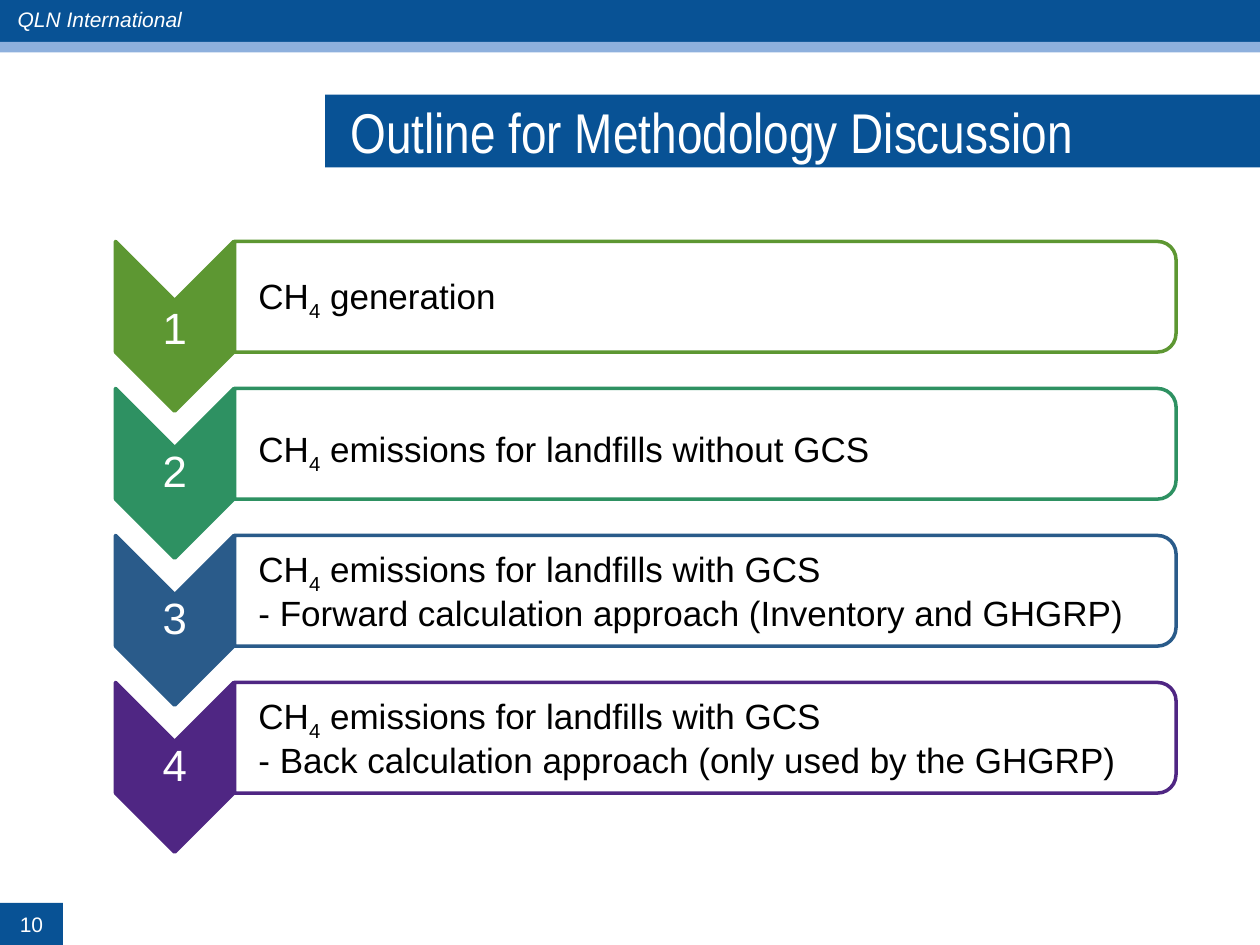
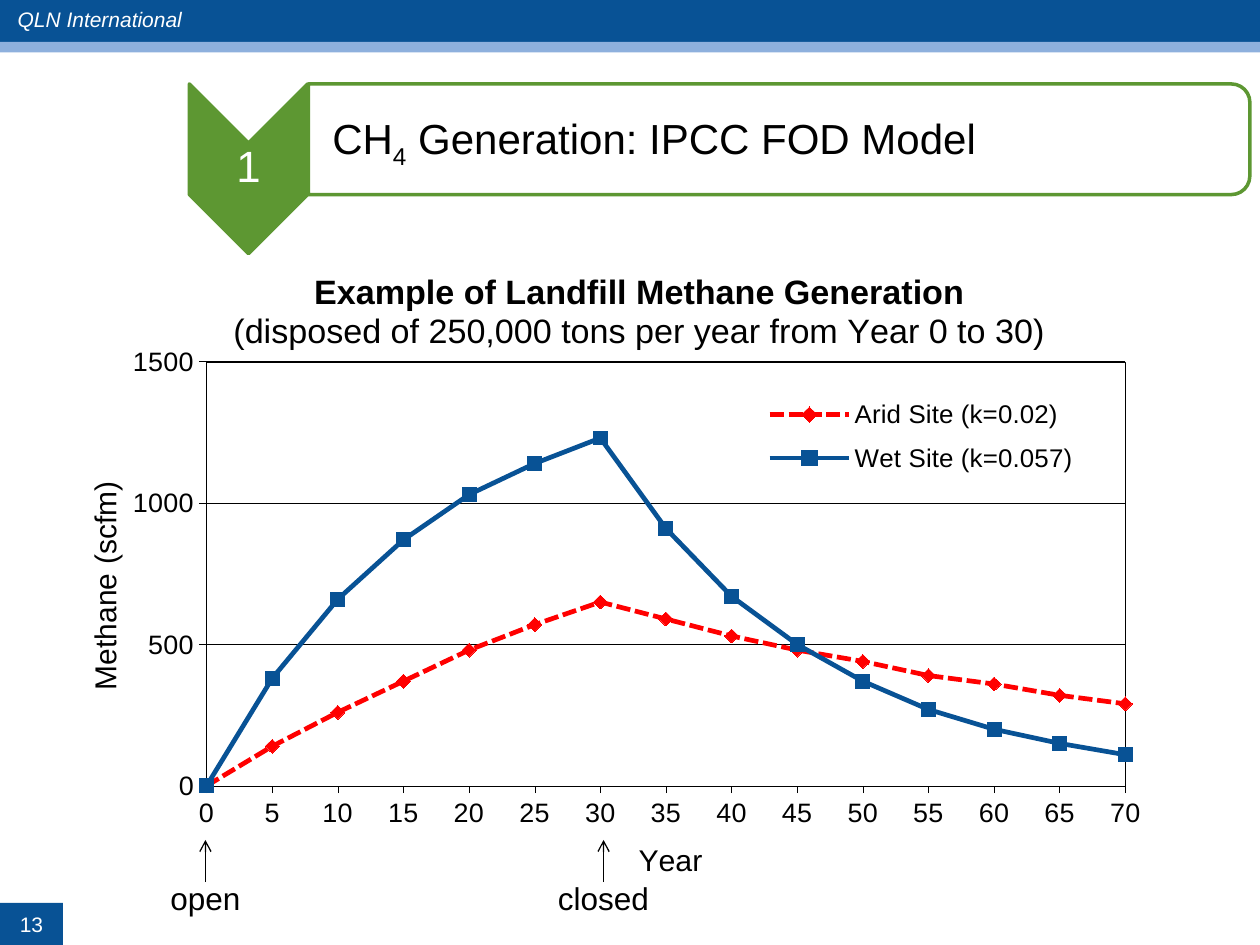
"""Build two slides on landfill methane: an outline and a generation chart."""
import pptx
import pptx.chart.data
import pptx.dml.color
import pptx.enum.chart
import pptx.enum.dml
import pptx.enum.shapes
import pptx.enum.text
import pptx.oxml
import pptx.oxml.ns
import pptx.util

Pt = pptx.util.Pt
Shape = pptx.enum.shapes.MSO_SHAPE
Align = pptx.enum.text.PP_ALIGN
Anchor = pptx.enum.text.MSO_ANCHOR
Mark = pptx.enum.chart.XL_MARKER_STYLE
Dash = pptx.enum.dml.MSO_LINE
qn = pptx.oxml.ns.qn

HUES = {"blue": "085295", "pale": "8EB0DD", "white": "FFFFFF", "black": "000000",
        "red": "FF0000", "green": "5D9732", "teal": "2E9162", "steel": "2A5B8A",
        "plum": "4F2683"}
BRAND = "QLN International"
TITLE = "Outline for Methodology Discussion"
STEPS = [
    {"hue": "green", "lines": ["CH_4 generation"], "drop": 36.5},
    {"hue": "teal", "lines": ["CH_4 emissions for landfills without GCS"], "tall": 63.4},
    {"hue": "steel", "lines": ["CH_4 emissions for landfills with GCS",
                               "- Forward calculation approach (Inventory and GHGRP)"]},
    {"hue": "plum", "lines": ["CH_4 emissions for landfills with GCS",
                              "- Back calculation approach (only used by the GHGRP)"]},
]
MODEL = ["CH_4 Generation: IPCC FOD Model"]
HEAD = ["Example of Landfill Methane Generation",
        "(disposed of 250,000 tons per year from Year 0 to 30)"]
YEARS = range(0, 71, 5)
SITES = [
    ("Arid Site (k=0.02)", "red", Mark.DIAMOND, Dash.SQUARE_DOT,
     [0, 140, 260, 370, 480, 570, 650, 590, 530, 480, 440, 390, 360, 320, 290]),
    ("Wet Site (k=0.057)", "blue", Mark.SQUARE, Dash.SOLID,
     [0, 380, 660, 870, 1030, 1140, 1230, 910, 670, 500, 370, 270, 200, 150, 110]),
]
EVENTS = [("open", 117.4, 66), ("closed", 344.9, 78)]


def tint(name):
    """Return the named colour."""
    return pptx.dml.color.RGBColor.from_string(HUES[name])


def write(frame, lines, size=12, hue="black", face="Arial", align=Align.LEFT,
          bold=0, italic=False, anchor=None, pad=None, space=None, after=None,
          wrap=None):
    """Fill a text frame; an underscore lowers the next character."""
    if anchor is not None:
        frame.vertical_anchor = anchor
    if wrap is not None:
        frame.word_wrap = wrap
        frame.auto_size = pptx.enum.text.MSO_AUTO_SIZE.NONE
    if pad:
        left, top, right, base = map(Pt, pad)
        frame.margin_left, frame.margin_top = left, top
        frame.margin_right, frame.margin_bottom = right, base
    for row, line in enumerate(lines):
        para = frame.add_paragraph() if row else frame.paragraphs[0]
        para.alignment = align
        if space:
            para.line_spacing = space
        if after:
            para.space_after = Pt(after)
        first, *rest = line.split("_")
        parts = [(first, False)]
        for part in rest:
            parts += [(part[0], True), (part[1:], False)]
        for text, low in parts:
            run = para.add_run()
            run.text = text
            font = run.font
            font.name, font.size = face, Pt(size)
            font.bold, font.italic = row < bold, italic
            font.color.rgb = tint(hue)
            if low:
                run._r.get_or_add_rPr().set("baseline", "-25000")


def put(item, x, y, wide, tall):
    """Move and size a shape."""
    item.left, item.top, item.width, item.height = map(Pt, (x, y, wide, tall))


def draw(slide, kind, x, y, wide, tall, fill, line=None, turn=False):
    """Add a shape that shows in the given frame, turned a quarter if asked."""
    if turn:
        x, y = x + (wide - tall) / 2, y + (tall - wide) / 2
        wide, tall = tall, wide
    item = slide.shapes.add_shape(kind, *map(Pt, (x, y, wide, tall)))
    item.shadow.inherit = False
    item.rotation = 90 if turn else 0
    item.fill.solid()
    item.fill.fore_color.rgb = tint(fill)
    if line:
        item.line.color.rgb = tint(line)
        item.line.width = Pt(2)
    else:
        item.line.fill.background()
    return item


def label(slide, lines, x, y, wide, tall, **form):
    """Add a text box."""
    box = slide.shapes.add_textbox(*map(Pt, (x, y, wide, tall)))
    write(box.text_frame, lines, **form)


def start(deck, page):
    """Add a title-only slide with its bands, brand and page number."""
    slide = deck.slides.add_slide(deck.slide_layouts[5])
    draw(slide, Shape.RECTANGLE, 0, 0, 720, 24, "blue")
    draw(slide, Shape.RECTANGLE, 0, 24, 720, 6, "pale")
    label(slide, [BRAND], 3, 0, 103, 21.6, hue="white", italic=True, wrap=False)
    badge = draw(slide, Shape.RECTANGLE, 0, 516, 36, 24, "blue")
    write(badge.text_frame, [str(page)], hue="white", align=Align.CENTER,
          anchor=Anchor.MIDDLE, pad=(0, 0, 0, 0))
    return slide


def step(slide, num, x, y, lines, hue, size=20, drop=34, tall=57, title=None):
    """Add a numbered chevron and its bar, with the text in a box or the title."""
    draw(slide, Shape.CHEVRON, x, y, 67.6, 97, hue, hue, True)
    tiny = (1.4, 1.4, 1.4, 1.4)
    label(slide, [str(num)], x, y + drop, 67.6, 28.8, size=25, hue="white",
          align=Align.CENTER, anchor=Anchor.MIDDLE, pad=tiny, space=0.9, wrap=True)
    draw(slide, Shape.ROUND_2_SAME_RECTANGLE, x + 68, y, 538, 63.2, "white", hue, True)
    spot = (x + 68, y + 3.2, 535, tall)
    form = dict(size=size, anchor=Anchor.MIDDLE, pad=(13.7, 1.4, 1.4, 1.4),
                space=0.9, after=size * 0.15, wrap=True)
    if title is None:
        label(slide, lines, *spot, **form)
    else:
        put(title, *spot)
        write(title.text_frame, lines, **form)
        slide.shapes.element.append(title.element)


def place(part, x, y, wide=None, tall=None):
    """Fix a chart part at fractions of the chart area."""
    plot = part.tag == qn("c:plotArea")
    old = part.find(qn("c:layout"))
    if old is not None:
        part.remove(old)
    tags = [("layoutTarget", "inner")] if plot else []
    tags += [("xMode", "edge"), ("yMode", "edge"), ("x", x), ("y", y)]
    if wide:
        tags += [("w", wide), ("h", tall)]
    body = "".join(f'<c:{tag} val="{val}"/>' for tag, val in tags)
    space = pptx.oxml.ns.nsdecls("c")
    part.insert(0 if plot else 1, pptx.oxml.parse_xml(
        f"<c:layout {space}><c:manualLayout>{body}</c:manualLayout></c:layout>"))


def thin(line):
    """Make a chart line thin and black."""
    line.color.rgb = tint("black")
    line.width = Pt(0.22)


def graph(slide):
    """Add the methane line chart."""
    data = pptx.chart.data.CategoryChartData()
    data.categories = [str(year) for year in YEARS]
    for name, *_, vals in SITES:
        data.add_series(name, vals)
    kind = pptx.enum.chart.XL_CHART_TYPE.LINE_MARKERS
    chart = slide.shapes.add_chart(kind, *map(Pt, (32.4, 138.2, 658.8, 368.6)), data).chart
    chart.font.name, chart.font.size = "Arial", Pt(16.5)
    chart.font.color.rgb = tint("black")
    chart.has_title = True
    write(chart.chart_title.text_frame, HEAD, size=19.5, align=Align.CENTER, bold=1)
    place(chart.chart_title._element, 0.15, 0.04)

    for axis, name, x, y in ((chart.category_axis, "Year", 0.5, 0.93),
                             (chart.value_axis, "Methane (scfm)", 0.02, 0.37)):
        axis.has_title = True
        write(axis.axis_title.text_frame, [name], size=17.3, align=Align.CENTER)
        place(axis.axis_title._element, x, y)
        axis.major_tick_mark = pptx.enum.chart.XL_TICK_MARK.OUTSIDE
        font = axis.tick_labels.font
        font.name, font.size = "Arial", Pt(15.4)
        font.color.rgb = tint("black")
        thin(axis.format.line)
    scale = chart.value_axis
    scale.minimum_scale, scale.maximum_scale, scale.major_unit = 0, 1500, 500
    thin(scale.major_gridlines.format.line)
    space = pptx.oxml.ns.nsdecls("c", "a")
    scale._element.find(qn("c:crosses")).addnext(
        pptx.oxml.parse_xml(f'<c:crossBetween {space} val="midCat"/>'))

    plot = chart.element.find(".//" + qn("c:plotArea"))
    place(plot, 0.13, 0.188, 0.797, 0.665)
    plot.append(pptx.oxml.parse_xml(
        f'<c:spPr {space}><a:noFill/><a:ln w="2794"><a:solidFill>'
        f'<a:srgbClr val="{HUES["black"]}"/></a:solidFill></a:ln></c:spPr>'))

    chart.has_legend = True
    key = chart.legend
    key.position = pptx.enum.chart.XL_LEGEND_POSITION.RIGHT
    key.include_in_layout = False
    key.font.name, key.font.size = "Arial", Pt(14.8)
    key.font.color.rgb = tint("black")
    place(key._element, 0.61, 0.225, 0.28, 0.16)

    chart.plots[0].vary_by_categories = False
    for line, (_, hue, mark, dash, _) in zip(chart.plots[0].series, SITES):
        line.smooth = False
        line.format.line.color.rgb = tint(hue)
        line.format.line.width = Pt(2.68)
        line.format.line.dash_style = dash
        line.marker.style, line.marker.size = mark, 8
        line.marker.format.fill.solid()
        line.marker.format.fill.fore_color.rgb = tint(hue)
        line.marker.format.line.color.rgb = tint(hue)


def event(slide, name, mid, wide):
    """Add a label under the chart with an arrow up to its year."""
    label(slide, [name], mid - wide / 2, 499, wide, 28.8, size=18,
          align=Align.CENTER, wrap=True)
    kind = pptx.enum.shapes.MSO_CONNECTOR.STRAIGHT
    arrow = slide.shapes.add_connector(kind, *map(Pt, (mid, 504, mid, 480)))
    arrow.line.color.rgb = tint("black")
    arrow.line.width = Pt(0.75)
    space = pptx.oxml.ns.nsdecls("a")
    arrow.line._get_or_add_ln().append(
        pptx.oxml.parse_xml(f'<a:tailEnd {space} type="arrow"/>'))
    arrow.element.spPr.append(pptx.oxml.parse_xml(f"<a:effectLst {space}/>"))


def main():
    """Build and save the deck."""
    deck = pptx.Presentation()
    deck.slide_width, deck.slide_height = Pt(720), Pt(540)

    slide = start(deck, 10)
    title = slide.shapes.title
    put(title, 185.8, 54, 534.2, 41.6)
    title.fill.solid()
    title.fill.fore_color.rgb = tint("blue")
    write(title.text_frame, [TITLE], size=32, hue="white", face="Arial Narrow",
          anchor=Anchor.MIDDLE, pad=(14.4, 7.2, 14.4, 7.2), wrap=True)
    for row, item in enumerate(STEPS):
        step(slide, row + 1, 66, 138 + 84 * row, **item)

    slide = start(deck, 13)
    graph(slide)
    step(slide, 1, 108.2, 48, MODEL, "green", size=24, title=slide.shapes.title)
    for item in EVENTS:
        event(slide, *item)

    deck.save("out.pptx")


if __name__ == "__main__":
    main()
